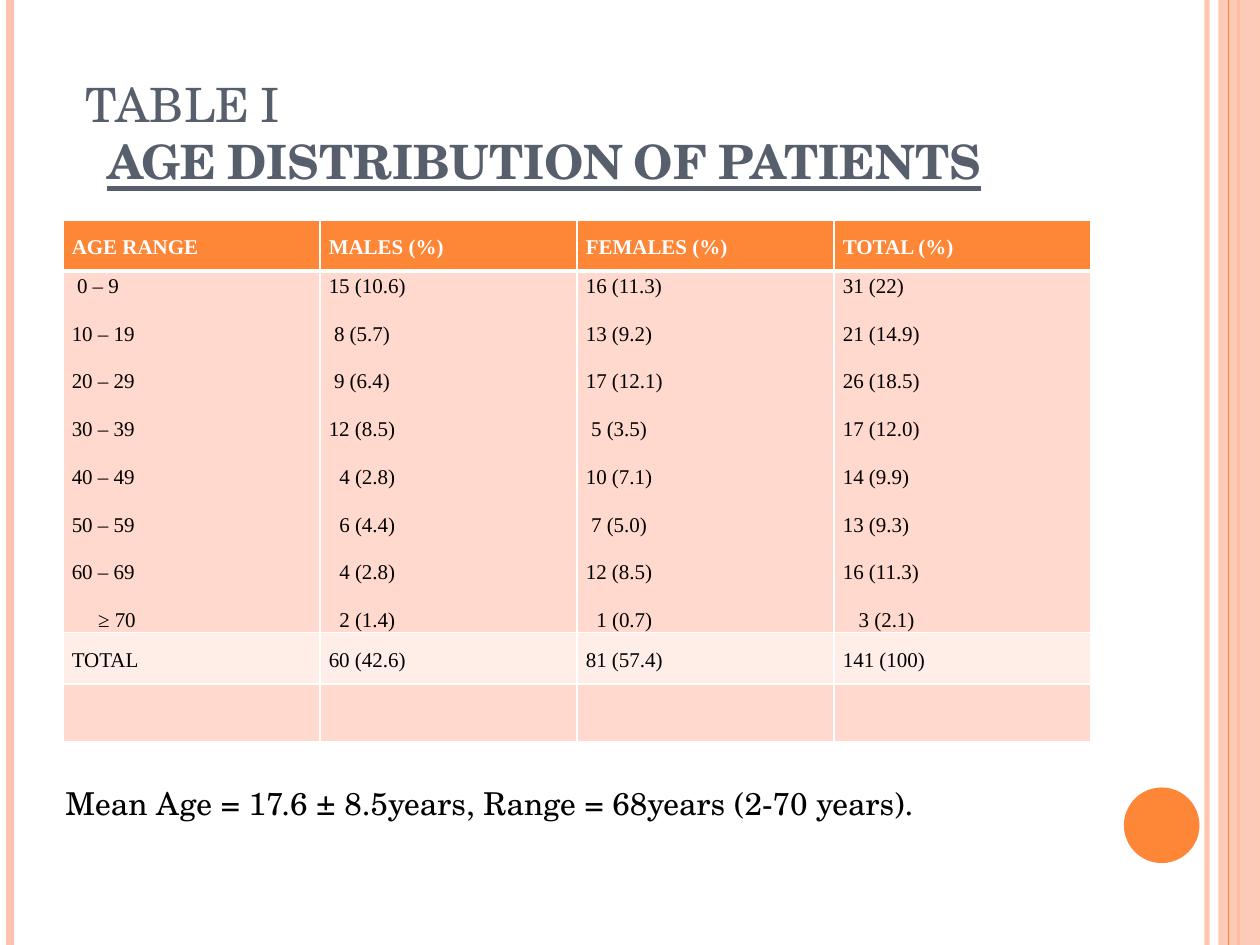
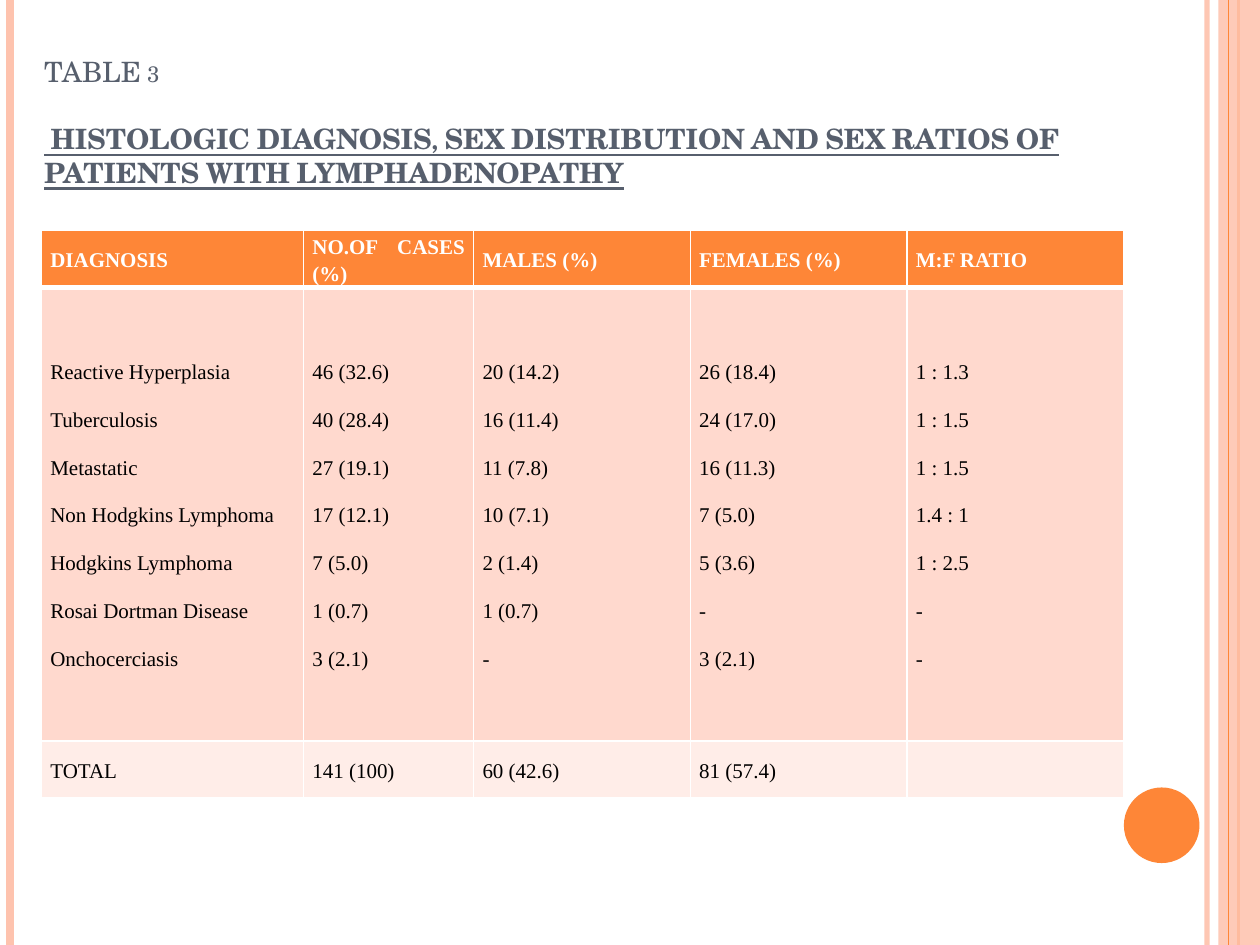
from lxml import etree
from pptx import Presentation
from pptx.dml.color import RGBColor
from pptx.enum.shapes import MSO_CONNECTOR, MSO_SHAPE
from pptx.enum.text import MSO_ANCHOR, MSO_AUTO_SIZE, PP_ALIGN
from pptx.oxml.ns import qn
from pptx.util import Inches, Pt

STRAIGHT = MSO_CONNECTOR.STRAIGHT
RECTANGLE, OVAL = MSO_SHAPE.RECTANGLE, MSO_SHAPE.OVAL
MIDDLE, BOTTOM = MSO_ANCHOR.MIDDLE, MSO_ANCHOR.BOTTOM
NO_AUTOFIT, GROW = MSO_AUTO_SIZE.NONE, MSO_AUTO_SIZE.SHAPE_TO_FIT_TEXT
LEFT, JUSTIFY = PP_ALIGN.LEFT, PP_ALIGN.JUSTIFY

ORANGE = RGBColor(0xFE, 0x86, 0x37)
PEACH = RGBColor(0xFE, 0xC3, 0xAE)
ROW_DARK = RGBColor(0xFF, 0xD9, 0xCE)
ROW_LIGHT = RGBColor(0xFF, 0xED, 0xE8)
SLATE = RGBColor(0x57, 0x5F, 0x6D)
WHITE = RGBColor(0xFF, 0xFF, 0xFF)
BLACK = RGBColor(0, 0, 0)
SERIF, TABLE_FONT = "TeX Gyre Schola", "Times New Roman"
SPACE_WIDTH = Pt(3)

SLIDES = [
    {
        "title_at": (0.5, 0.3, 8.17, 1.25),
        "title_size": 27,
        "title": [("TABLE I", 0.08, 0), ("AGE DISTRIBUTION OF PATIENTS", 0.25, 0)],
        "table_at": (0.5, 1.75),
        "columns": [2.04] * 4,
        "rows": [0.4, 2.87, 0.41, 0.46],
        "first_column_align": JUSTIFY,
        "header": ["AGE RANGE", "MALES (%)", "FEMALES (%)", "TOTAL (%)"],
        "body": [
            ["0 – 9", "15 (10.6)", "16 (11.3)", "31 (22)"],
            ["10 – 19", "8 (5.7)", "13 (9.2)", "21 (14.9)"],
            ["20 – 29", "9 (6.4)", "17 (12.1)", "26 (18.5)"],
            ["30 – 39", "12 (8.5)", "5 (3.5)", "17 (12.0)"],
            ["40 – 49", "4 (2.8)", "10 (7.1)", "14 (9.9)"],
            ["50 – 59", "6 (4.4)", "7 (5.0)", "13 (9.3)"],
            ["60 – 69", "4 (2.8)", "12 (8.5)", "16 (11.3)"],
            ["≥ 70", "2 (1.4)", "1 (0.7)", "3 (2.1)"],
        ],
        "indents": {"0 – 9": 1, "8 (5.7)": 1, "9 (6.4)": 1, "5 (3.5)": 1, "7 (5.0)": 1,
                    "4 (2.8)": 2, "6 (4.4)": 2, "2 (1.4)": 2, "1 (0.7)": 2,
                    "3 (2.1)": 3, "≥ 70": 5},
        "total": ["TOTAL", "60 (42.6)", "81 (57.4)", "141 (100)"],
        "caption": "Mean Age = 17.6 ± 8.5years, Range = 68years (2-70 years).",
    },
    {
        "title_at": (0.25, 0.3, 9.25, 1.25),
        "title_size": 16,
        "title": [("TABLE 3", 0, 0),
                  (" HISTOLOGIC DIAGNOSIS, SEX DISTRIBUTION AND SEX RATIOS OF "
                   "PATIENTS WITH LYMPHADENOPATHY", 0, 19)],
        "table_at": (0.33, 1.83),
        "columns": [2.08, 1.35, 1.72, 1.72, 1.72],
        "rows": [0.45, 3.6, 0.45],
        "first_column_align": LEFT,
        "header": ["DIAGNOSIS", "NO.OF CASES (%)", "MALES (%)", "FEMALES (%)", "M:F RATIO"],
        "body": [
            ["Reactive Hyperplasia", "46 (32.6)", "20 (14.2)", "26 (18.4)", "1 : 1.3"],
            ["Tuberculosis", "40 (28.4)", "16 (11.4)", "24 (17.0)", "1 : 1.5"],
            ["Metastatic", "27 (19.1)", "11 (7.8)", "16 (11.3)", "1 : 1.5"],
            ["Non Hodgkins Lymphoma", "17 (12.1)", "10 (7.1)", "7 (5.0)", "1.4 : 1"],
            ["Hodgkins Lymphoma", "7 (5.0)", "2 (1.4)", "5 (3.6)", "1 : 2.5"],
            ["Rosai Dortman Disease", "1 (0.7)", "1 (0.7)", "-", "-"],
            ["Onchocerciasis", "3 (2.1)", "-", "3 (2.1)", "-"],
        ],
        "indents": {},
        "total": ["TOTAL", "141 (100)", "60 (42.6)", "81 (57.4)", ""],
        "caption": None,
    },
]


def add_span(para, text, font_name, size, color, bold=False):
    span = para.add_run()
    span.text = text
    span.font.name = font_name
    span.font.size = Pt(size)
    span.font.color.rgb = color
    span.font.bold = bold
    return span


def set_alpha(element, percent):
    color = next(element.iter(qn("a:srgbClr")))
    etree.SubElement(color, qn("a:alpha")).set("val", str(percent * 1000))


deck = Presentation()
deck.slide_width, deck.slide_height = Inches(10), Inches(7.5)
layout = deck.slide_layouts[5]
for placeholder in list(layout.placeholders)[1:]:
    layout.shapes.element.remove(placeholder.element)

slides = [deck.slides.add_slide(layout) for _ in SLIDES]

canvas = slides[0].shapes
decorations = []
for x, color, width in [(9.58, PEACH, 3), (0.08, PEACH, 4.5), (9.83, ORANGE, 1.5),
                        (9.75, ORANGE, 0.75)]:
    line = canvas.add_connector(STRAIGHT, Inches(x), 0, Inches(x), Inches(7.5))
    line.line.color.rgb = color
    line.line.width = Pt(width)
    etree.SubElement(line.element.spPr, qn("a:effectLst"))
    decorations.append(line)
set_alpha(decorations[0].element, 93)

band = canvas.add_shape(RECTANGLE, Inches(9.67), 0, Inches(0.33), Inches(7.5))
disc = canvas.add_shape(OVAL, Inches(8.92), Inches(6.25), Inches(0.6), Inches(0.6))
for shape, color in [(band, PEACH), (disc, ORANGE)]:
    shape.shadow.inherit = False
    shape.fill.solid()
    shape.fill.fore_color.rgb = color
    shape.line.fill.background()
set_alpha(band.element, 87)
decorations.insert(3, band)
decorations.append(disc)
for shape in decorations:
    layout.shapes.element.append(shape.element)

for slide, content in zip(slides, SLIDES):
    title = slide.shapes.title
    title.left, title.top, title.width, title.height = map(Inches, content["title_at"])
    frame = title.text_frame
    frame.auto_size = NO_AUTOFIT
    frame.vertical_anchor = BOTTOM
    for number, (text, indent, gap) in enumerate(content["title"]):
        para = frame.add_paragraph() if number else frame.paragraphs[0]
        para.alignment = LEFT
        para.space_before = Pt(gap)
        para._p.get_or_add_pPr().set("marL", str(Inches(indent)))
        span = add_span(para, text, SERIF, content["title_size"], SLATE, number == 1)
        span.font.underline = number == 1
        span._r.get_or_add_rPr().set("cap", "small")

    columns, rows = content["columns"], content["rows"]
    left, top = content["table_at"]
    table = slide.shapes.add_table(len(rows), len(columns), Inches(left), Inches(top),
                                   Inches(sum(columns)), Inches(sum(rows))).table
    for column, width in zip(table.columns, columns):
        column.width = Inches(width)
    for row, height in zip(table.rows, rows):
        row.height = Inches(height)

    header = [[text] for text in content["header"]]
    body = list(zip(*content["body"]))
    total = [[text] for text in content["total"]]
    blank = [[""] for _ in columns]
    fills = [ORANGE, ROW_DARK, ROW_LIGHT, ROW_DARK]
    for row_index, (row, cells, fill) in enumerate(zip(table.rows, [header, body, total, blank], fills)):
        for column_index, (cell, lines) in enumerate(zip(row.cells, cells)):
            cell.vertical_anchor = MIDDLE
            cell.margin_left = cell.margin_right = Inches(0.07)
            cell.margin_top = cell.margin_bottom = 0
            properties = cell._tc.get_or_add_tcPr()
            for side in "LRTB":
                heavy = (row_index, side) in [(0, "B"), (1, "T")]
                border = etree.SubElement(properties, qn("a:ln" + side), w=str(Pt(3 if heavy else 1)))
                paint = etree.SubElement(border, qn("a:solidFill"))
                etree.SubElement(paint, qn("a:srgbClr"), val=str(WHITE))
            cell.fill.solid()
            cell.fill.fore_color.rgb = fill
            for number, text in enumerate(lines):
                if not text:
                    continue
                para = cell.text_frame.add_paragraph() if number else cell.text_frame.paragraphs[0]
                para.alignment = JUSTIFY if column_index else content["first_column_align"]
                para.line_spacing = 1.15
                para.space_before = Pt(12)
                indent = SPACE_WIDTH * content["indents"].get(text, 0)
                para._p.get_or_add_pPr().set("marL", str(indent))
                add_span(para, text, TABLE_FONT, 12, BLACK if row_index else WHITE, row_index == 0)

    if content["caption"]:
        box = slide.shapes.add_textbox(Inches(0.42), Inches(6.17), Inches(7.02), Inches(0.4))
        box.text_frame.word_wrap = False
        box.text_frame.auto_size = GROW
        add_span(box.text_frame.paragraphs[0], content["caption"], SERIF, 18, BLACK)

deck.save("out.pptx")
